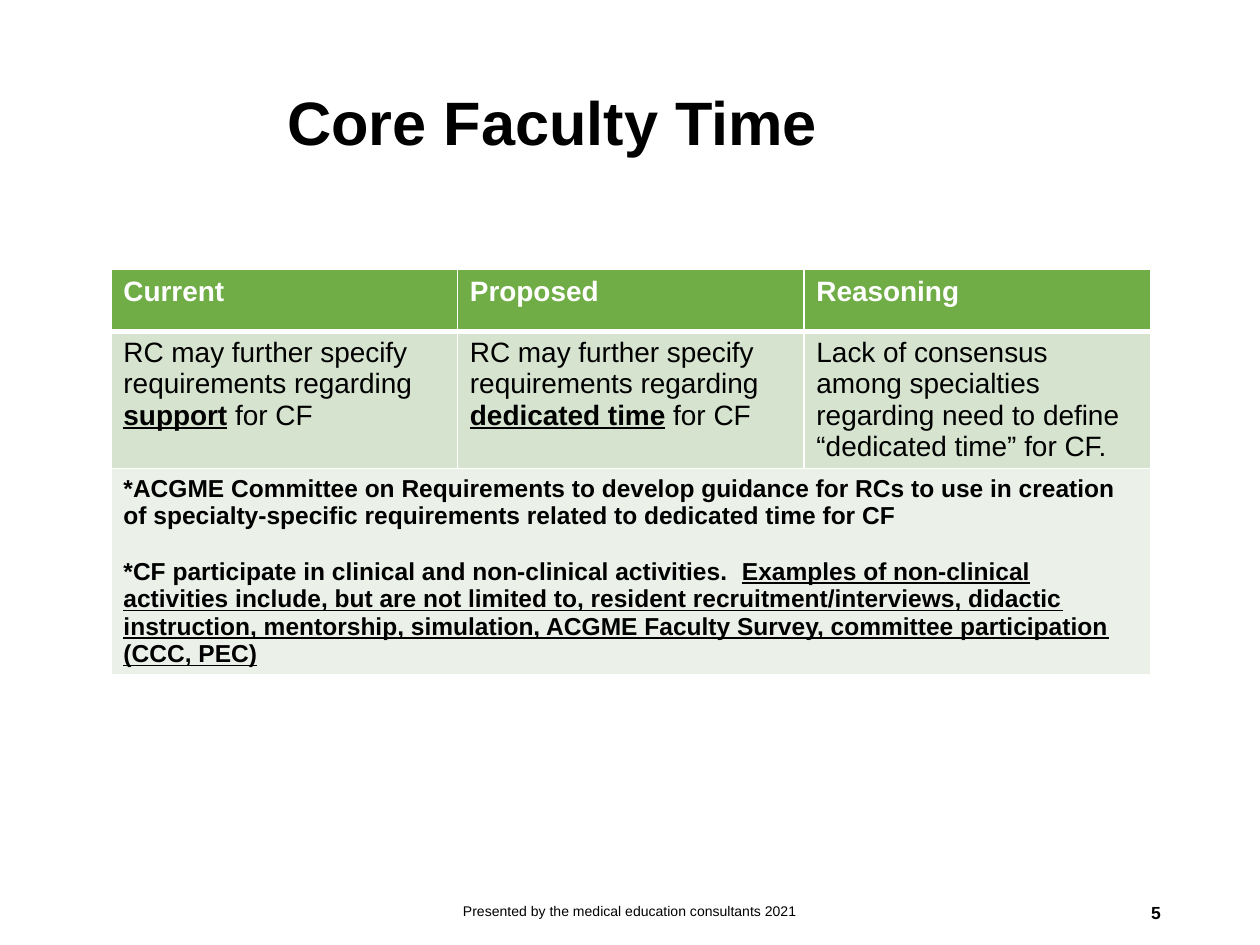
from dataclasses import dataclass

from lxml import etree
from pptx import Presentation
from pptx.dml.color import RGBColor
from pptx.enum.text import MSO_ANCHOR, MSO_AUTO_SIZE, PP_ALIGN
from pptx.oxml.ns import qn
from pptx.util import Inches, Pt

LEFT, CENTER, RIGHT = PP_ALIGN.LEFT, PP_ALIGN.CENTER, PP_ALIGN.RIGHT
MIDDLE = MSO_ANCHOR.MIDDLE
NO_AUTOFIT = MSO_AUTO_SIZE.NONE

WIDTH, HEIGHT = Inches(10), Inches(7.5)
FONT = "Arial"
COLORS = {
    "text": "000000",
    "light": "FFFFFF",
    "header": "70AD47",
    "body": "D5E3CF",
    "note": "EBF1E9",
}


@dataclass(frozen=True)
class Span:
    text: str
    bold: bool = False
    underline: bool = False


@dataclass(frozen=True)
class Row:
    height: float
    fill: str
    color: str
    size: int
    top: int
    bottom: int
    cells: list  # one list of paragraphs per cell, each a list of spans


@dataclass(frozen=True)
class Footer:
    text: str
    x: float  # position and size as shares of the slide
    y: float
    w: float
    size: int
    align: PP_ALIGN
    bold: bool = False


ROWS = [
    Row(0.49, "header", "light", 16, 1, 3,
        [[[Span(name, bold=True)]] for name in ("Current", "Proposed", "Reasoning")]),
    Row(1.04, "body", "text", 16, 3, 1, [
        *([[Span("RC may further specify requirements regarding "),
            Span(topic, bold=True, underline=True), Span(" for CF")]]
          for topic in ("support", "dedicated time")),
        [[Span("Lack of consensus among specialties regarding need to define "
               "“dedicated time” for CF.")]],
    ]),
    Row(1.04, "note", "text", 14, 1, 1, [[
        [Span("*ACGME Committee on Requirements to develop guidance for RCs to use in "
              "creation of specialty-specific requirements related to dedicated time "
              "for CF", bold=True)],
        [Span("*CF participate in clinical and non-clinical activities.  ", bold=True),
         Span("Examples of non-clinical activities include, but are not limited to, "
              "resident recruitment/interviews, didactic instruction, mentorship, "
              "simulation, ACGME Faculty Survey, committee participation (CCC, PEC)",
              bold=True, underline=True)],
    ]]),
]

FOOTERS = [
    Footer("Presented by the medical education consultants 2021",
           0.331, 0.937, 0.338, 8, CENTER),
    Footer("5", 0.706, 0.939, 0.225, 10, RIGHT, bold=True),
]


def write(paragraph, spans: list[Span], size: int, color: str) -> None:
    for span in spans:
        run = paragraph.add_run()
        run.text = span.text
        formats = {"name": FONT, "size": Pt(size),
                   "bold": span.bold, "underline": span.underline}
        for key, value in formats.items():
            setattr(run.font, key, value)
        run.font.color.rgb = RGBColor.from_string(COLORS[color])


def set_borders(cell, top: int, bottom: int) -> None:
    properties = cell._tc.get_or_add_tcPr()
    for side, points in {"L": 1, "R": 1, "T": top, "B": bottom}.items():
        line = etree.SubElement(properties, qn(f"a:ln{side}"), w=str(Pt(points)))
        fill = etree.SubElement(line, qn("a:solidFill"))
        etree.SubElement(fill, qn("a:srgbClr"), val=COLORS["light"])


def add_title(slide, text: str) -> None:
    title = slide.shapes.title
    title.left, title.top = int(WIDTH * 0.218), int(HEIGHT * 0.036)
    title.width, title.height = int(WIDTH * 0.714), int(HEIGHT * 0.193)
    frame = title.text_frame
    margins = dict.fromkeys(
        ("margin_left", "margin_top", "margin_right", "margin_bottom"), Inches(0.1))
    formats = {"vertical_anchor": MIDDLE, "word_wrap": True,
               "auto_size": NO_AUTOFIT, **margins}
    for key, value in formats.items():
        setattr(frame, key, value)
    heading = frame.paragraphs[0]
    heading.alignment = LEFT
    heading.line_spacing = 0.9
    write(heading, [Span(text, bold=True)], 35, "text")


def add_comparison(slide, rows: list[Row]) -> None:
    columns = len(rows[0].cells)
    holder = slide.shapes.add_table(
        len(rows), columns, Inches(0.88), Inches(2.14), Inches(8.25), Inches(3.16))
    table = holder.table
    for r, row in enumerate(rows):
        table.rows[r].height = Inches(row.height)
        for c in range(columns):
            cell = table.cell(r, c)
            set_borders(cell, row.top, row.bottom)
            cell.fill.solid()
            cell.fill.fore_color.rgb = RGBColor.from_string(COLORS[row.fill])
        # A row with a single entry spans the whole table
        if len(row.cells) == 1:
            table.cell(r, 0).merge(table.cell(r, columns - 1))
        for c, paragraphs in enumerate(row.cells):
            frame = table.cell(r, c).text_frame
            for i, spans in enumerate(paragraphs):
                paragraph = frame.add_paragraph() if i else frame.paragraphs[0]
                if i:
                    paragraph.space_before = Pt(16)
                write(paragraph, spans, row.size, row.color)
    holder.height = Inches(3.16)


def add_footer(slide, footer: Footer) -> None:
    box = slide.shapes.add_textbox(
        int(WIDTH * footer.x), int(HEIGHT * footer.y),
        int(WIDTH * footer.w), Inches(0.4))
    frame = box.text_frame
    frame.word_wrap = True
    frame.vertical_anchor = MIDDLE
    line = frame.paragraphs[0]
    line.alignment = footer.align
    write(line, [Span(footer.text, footer.bold)], footer.size, "text")


def main() -> None:
    deck = Presentation()
    deck.slide_width, deck.slide_height = WIDTH, HEIGHT
    slide = deck.slides.add_slide(deck.slide_layouts[5])

    # Title
    add_title(slide, "Core Faculty Time")
    # Comparison of current and proposed requirements
    add_comparison(slide, ROWS)
    # Presenter and page number
    for footer in FOOTERS:
        add_footer(slide, footer)

    deck.save("out.pptx")


if __name__ == "__main__":
    main()
